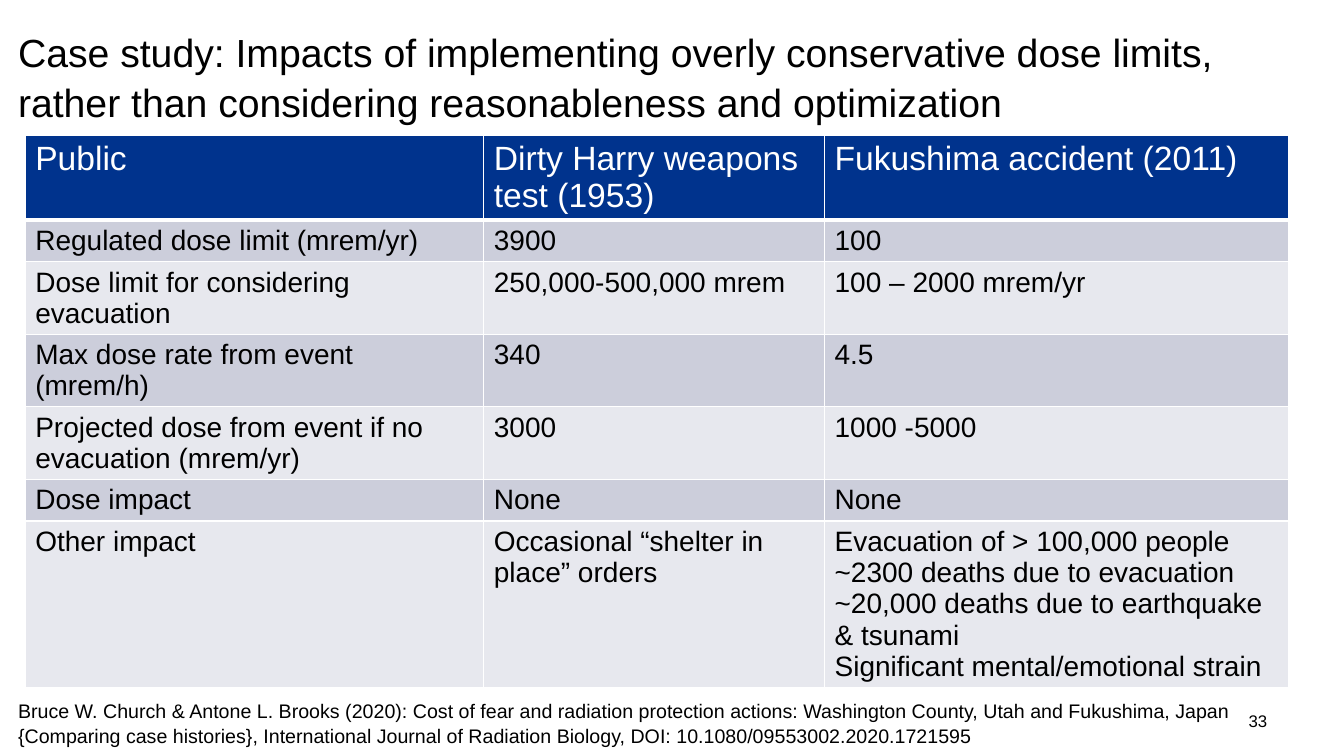
from pptx import Presentation
from pptx import util as u
from pptx.dml import color
from pptx.enum import text
from pptx.oxml import parse_xml
from pptx.oxml import ns

BLACK = color.RGBColor(0x00, 0x00, 0x00)
WHITE = color.RGBColor(0xFF, 0xFF, 0xFF)
NAVY = color.RGBColor(0x00, 0x33, 0x8D)
BAND_DARK = color.RGBColor(0xCC, 0xCE, 0xDB)
BAND_LIGHT = color.RGBColor(0xE7, 0xE8, 0xEE)


def add_run(p, words, size, rgb=BLACK):
    r = p.add_run()
    r.text = words
    r.font.name = "Arial"
    r.font.size = u.Pt(size)
    r.font.bold = False
    r.font.color.rgb = rgb


def add_border(cell, side, width):
    cell._tc.get_or_add_tcPr().append(parse_xml(
        f'<a:{side} {ns.nsdecls("a")} w="{u.Pt(width)}"><a:solidFill>'
        f'<a:srgbClr val="{WHITE}"/></a:solidFill></a:{side}>'))


prs = Presentation()
prs.slide_width, prs.slide_height = u.Pt(960), u.Pt(540)
s = prs.slides.add_slide(prs.slide_layouts[6])

rows = [
    ["Public", "Dirty Harry weapons test (1953)", "Fukushima accident (2011)"],
    ["Regulated dose limit (mrem/yr)", "3900", "100"],
    ["Dose limit for considering evacuation", "250,000-500,000 mrem", "100 – 2000 mrem/yr"],
    ["Max dose rate from event (mrem/h)", "340", "4.5"],
    ["Projected dose from event if no evacuation (mrem/yr)", "3000", "1000 -5000"],
    ["Dose impact", "None", "None"],
    ["Other impact", "Occasional “shelter in place” orders",
     "Evacuation of > 100,000 people\n~2300 deaths due to evacuation\n"
     "~20,000 deaths due to earthquake & tsunami\nSignificant mental/emotional strain"],
]
widths = [327.6, 243.4, 331.2]
heights = [60.8, 29.6, 51.9, 51.9, 51.9, 29.6, 118.9]

table = s.shapes.add_table(len(rows), len(widths), u.Pt(18), u.Pt(96.5),
                           u.Pt(sum(widths)), u.Pt(sum(heights))).table
for column, width in zip(table.columns, widths):
    column.width = u.Pt(width)
for i, (row, height) in enumerate(zip(rows, heights)):
    table.rows[i].height = u.Pt(height)
    header = i == 0
    for j, words in enumerate(row):
        cell = table.cell(i, j)
        for side in ("lnL", "lnR", "lnT", "lnB"):
            add_border(cell, side, 3 if header and side == "lnB" else 1)
        cell.fill.solid()
        cell.fill.fore_color.rgb = NAVY if header else BAND_DARK if i % 2 else BAND_LIGHT
        tf = cell.text_frame
        for k, line in enumerate(words.split("\n")):
            p = tf.add_paragraph() if k else tf.paragraphs[0]
            add_run(p, line, 24 if header else 20, WHITE if header else BLACK)

MIDDLE, TOP = text.MSO_ANCHOR.MIDDLE, text.MSO_ANCHOR.TOP
LEFT, RIGHT = text.PP_ALIGN.LEFT, text.PP_ALIGN.RIGHT
boxes = [
    ("Case study: Impacts of implementing overly conservative dose limits, "
     "rather than considering reasonableness and optimization",
     (5.8, 1.4, 867.6, 104.4), 28, MIDDLE, LEFT, 1.07),
    ("Bruce W. Church & Antone L. Brooks (2020): Cost of fear and radiation protection "
     "actions: Washington County, Utah and Fukushima, Japan {Comparing case histories}, "
     "International Journal of Radiation Biology, DOI: 10.1080/09553002.2020.1721595",
     (5.8, 494.6, 943.9, 41), 14, TOP, LEFT, 1.07),
    ("33", (688.3, 500.4, 223.9, 28.8), 12, MIDDLE, RIGHT, 1.0),
]
for words, place, size, anchor, align, spacing in boxes:
    tf = s.shapes.add_textbox(*map(u.Pt, place)).text_frame
    tf.word_wrap = True
    tf.vertical_anchor = anchor
    p = tf.paragraphs[0]
    p.alignment = align
    p.line_spacing = spacing
    add_run(p, words, size)

prs.save("out.pptx")
